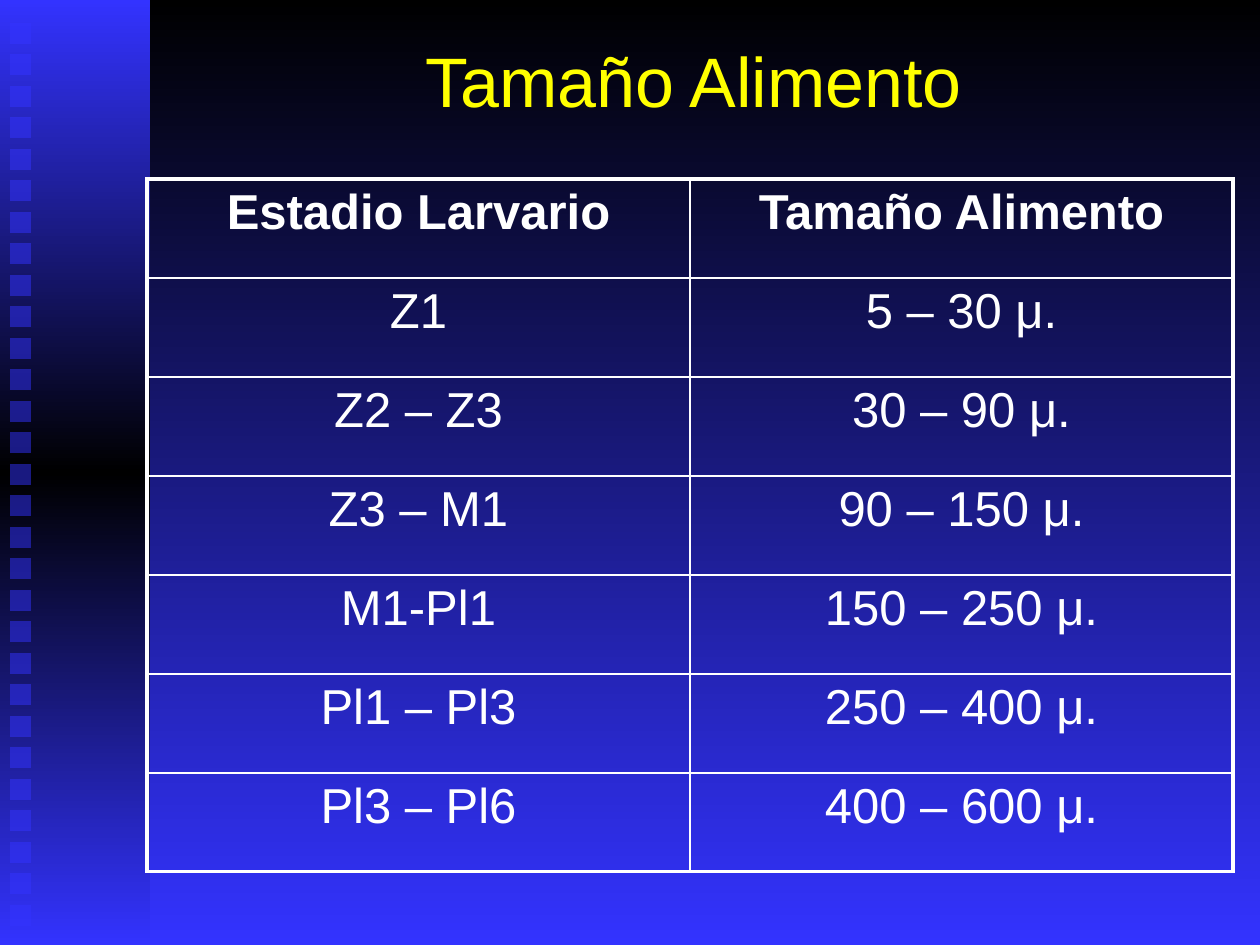
from dataclasses import dataclass

from lxml import etree
from pptx import Presentation
from pptx.dml.color import RGBColor
from pptx.enum.shapes import MSO_SHAPE
from pptx.enum.text import MSO_ANCHOR, PP_ALIGN
from pptx.oxml.ns import qn
from pptx.util import Pt

RECTANGLE = MSO_SHAPE.RECTANGLE
MIDDLE = MSO_ANCHOR.MIDDLE
CENTER = PP_ALIGN.CENTER
EMU_PER_PX = 914400 / 126
BLANK_LAYOUT = 6


@dataclass(frozen=True)
class Theme:
    font: str = "Arial"
    black: str = "000000"
    blue: str = "3333FF"
    white: str = "FFFFFF"
    yellow: str = "FFFF00"
    title_size: float = 40
    table_size: float = 28
    row_space: float = 5.6
    outer_line: float = 2.25
    inner_line: float = 1


THEME = Theme()
ROWS = [
    ("Estadio Larvario", "Tamaño Alimento"),
    ("Z1", "5 – 30 μ."),
    ("Z2 – Z3", "30 – 90 μ."),
    ("Z3 – M1", "90 – 150 μ."),
    ("M1-Pl1", "150 – 250 μ."),
    ("Pl1 – Pl3", "250 – 400 μ."),
    ("Pl3 – Pl6", "400 – 600 μ."),
]


def px(value):
    return round(value * EMU_PER_PX)


def add_color(parent, color):
    return etree.SubElement(parent, qn("a:srgbClr"), val=color)


def set_gradient(fill, element, colors):
    """Fill top to bottom with evenly spaced colours; element holds the fill's XML."""
    fill.gradient()
    fill.gradient_angle = 270
    stops = element.find(".//" + qn("a:gsLst"))
    for stop in list(stops):
        stops.remove(stop)
    for index, color in enumerate(colors):
        position = 100000 * index // (len(colors) - 1)
        add_color(etree.SubElement(stops, qn("a:gs"), pos=str(position)), color)


def add_rectangle(page, left, top, width, height):
    shape = page.shapes.add_shape(RECTANGLE, px(left), px(top), px(width), px(height))
    shape.shadow.inherit = False
    shape.line.fill.background()
    return shape


def add_side_band(page):
    band = add_rectangle(page, 0, 0, 150, 945)
    set_gradient(band.fill, band.element.spPr, [THEME.blue, THEME.black, THEME.blue])
    for index in range(29):
        square = add_rectangle(page, 10, 23 + index * 63 // 2, 21, 21)
        square.fill.solid()
        square.fill.fore_color.rgb = RGBColor.from_string(THEME.blue)
        color = square.element.spPr.find(".//" + qn("a:srgbClr"))
        etree.SubElement(color, qn("a:alpha"), val="50000")


def write_text(frame, text, size, color, bold=False):
    para = frame.paragraphs[0]
    para.alignment = CENTER
    span = para.add_run()
    span.text = text
    span.font.name = THEME.font
    span.font.size = Pt(size)
    span.font.bold = bold
    span.font.color.rgb = RGBColor.from_string(color)
    return para


def add_title(page, text):
    box = page.shapes.add_textbox(px(158), 0, px(1071), px(158))
    box.text_frame.word_wrap = True
    box.text_frame.vertical_anchor = MIDDLE
    write_text(box.text_frame, text, THEME.title_size, THEME.yellow)


def set_borders(cell, outer_sides):
    """Draw all four sides, with the heavier line on the outer ones."""
    properties = cell._tc.get_or_add_tcPr()
    for index, side in enumerate(("L", "R", "T", "B")):
        width = THEME.outer_line if side in outer_sides else THEME.inner_line
        line = etree.Element(qn("a:ln" + side), w=str(Pt(width)))
        add_color(etree.SubElement(line, qn("a:solidFill")), THEME.white)
        properties.insert(index, line)


def add_size_table(page, rows):
    column_width, row_height = 543, 99
    row_count, column_count = len(rows), len(rows[0])
    table = page.shapes.add_table(
        row_count, column_count, px(147), px(179),
        px(column_width * column_count), px(row_height * row_count),
    ).table
    table.first_row = False
    table.horz_banding = False
    for row_index, row in enumerate(rows):
        for column_index, text in enumerate(row):
            cell = table.cell(row_index, column_index)
            cell.fill.background()
            para = write_text(cell.text_frame, text, THEME.table_size,
                              THEME.white, bold=row_index == 0)
            para.space_before = Pt(THEME.row_space)
            outer_sides = {
                "L": column_index == 0,
                "R": column_index == column_count - 1,
                "T": row_index == 0,
                "B": row_index == row_count - 1,
            }
            set_borders(cell, [side for side, outer in outer_sides.items() if outer])


def main():
    deck = Presentation()
    deck.slide_width, deck.slide_height = px(1260), px(945)
    page = deck.slides.add_slide(deck.slide_layouts[BLANK_LAYOUT])
    set_gradient(page.background.fill, page.element, [THEME.black, THEME.blue])
    add_side_band(page)
    add_title(page, "Tamaño Alimento")
    add_size_table(page, ROWS)
    deck.save("out.pptx")


if __name__ == "__main__":
    main()
